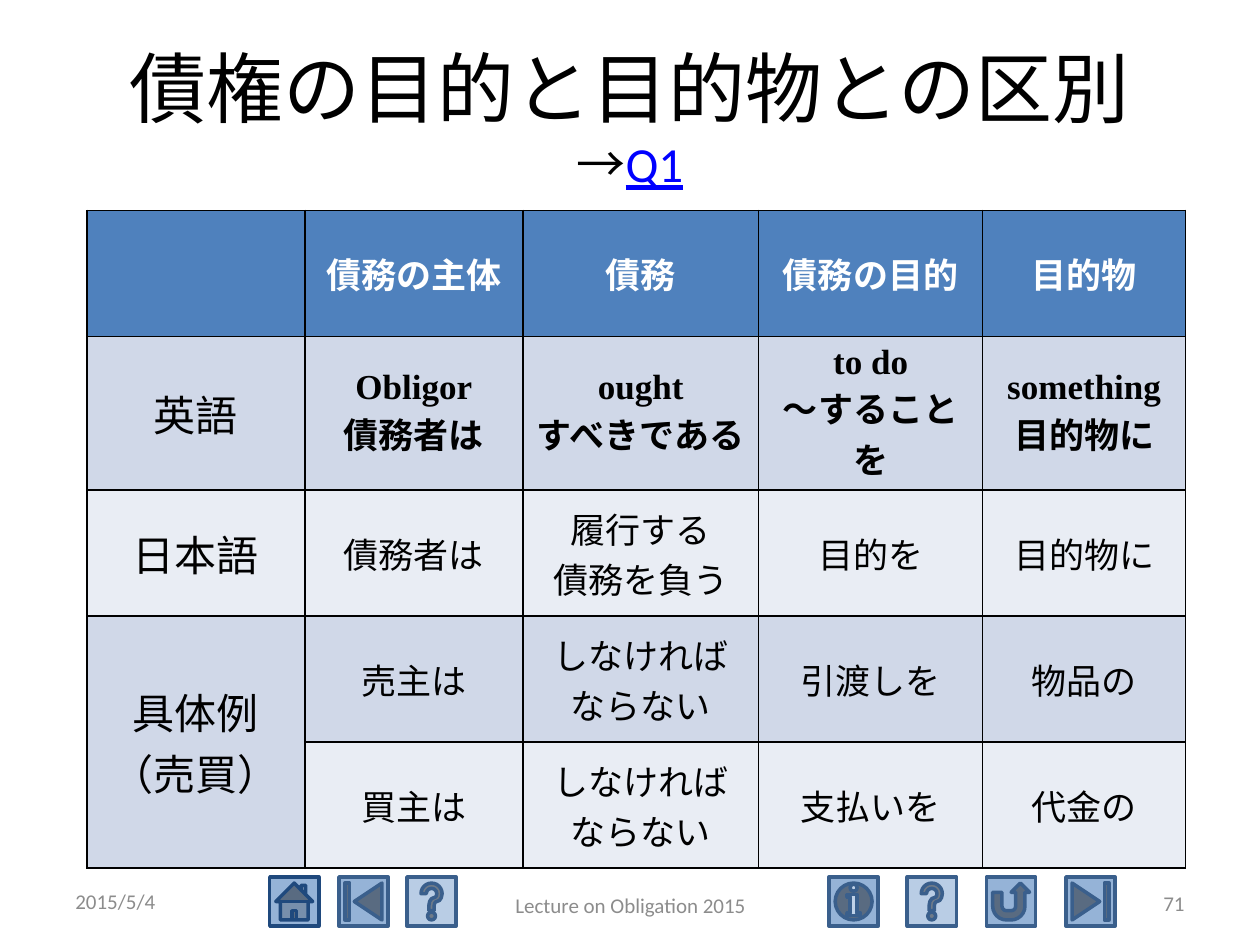
from lxml import etree
from pptx import Presentation
from pptx.dml.color import RGBColor
from pptx.enum.shapes import MSO_SHAPE
from pptx.enum.text import MSO_ANCHOR, MSO_AUTO_SIZE, PP_ALIGN
from pptx.oxml.ns import qn
from pptx.util import Inches, Pt

LEFT, CENTER, RIGHT = PP_ALIGN.LEFT, PP_ALIGN.CENTER, PP_ALIGN.RIGHT
MIDDLE, NO_FIT = MSO_ANCHOR.MIDDLE, MSO_AUTO_SIZE.NONE
HOME, BACK = MSO_SHAPE.ACTION_BUTTON_HOME, MSO_SHAPE.ACTION_BUTTON_BEGINNING
HELP, INFO = MSO_SHAPE.ACTION_BUTTON_HELP, MSO_SHAPE.ACTION_BUTTON_INFORMATION
RETURN, END = MSO_SHAPE.ACTION_BUTTON_RETURN, MSO_SHAPE.ACTION_BUTTON_END

BODY_FONT, ENGLISH_FONT = "Calibri", "Times New Roman"
BLACK, WHITE, GREY, LINK = "000000", "FFFFFF", "8C8C8C", "0000FF"
HEADER, DARK_BAND, LIGHT_BAND = "4F81BD", "D0D8E8", "E9EDF4"
BUTTON, PALE_BUTTON, EDGE, NAVY = "95B3D7", "B9CDE5", "3A5F8C", "1F497D"

COLUMN_WIDTHS = [1.73, 1.73, 1.87, 1.78, 1.61]
ROW_HEIGHTS = [1, 1.22, 1, 1, 1]  # the English row holds three lines
ROW_FILLS = [HEADER, DARK_BAND, LIGHT_BAND, DARK_BAND, LIGHT_BAND]
ROWS = [
    ["", "債務の主体", "債務", "債務の目的", "目的物"],
    ["英語", "Obligor\n債務者は", "ought\nすべきである", "to do\n～することを", "something\n目的物に"],
    ["日本語", "債務者は", "履行する\n債務を負う", "目的を", "目的物に"],
    ["具体例\n（売買）", "売主は", "しなければ\nならない", "引渡しを", "物品の"],
    ["", "買主は", "しなければ\nならない", "支払いを", "代金の"],
]
# Left edge, kind, fill and line of each navigation button
BUTTONS = [
    (2.14, HOME, BUTTON, NAVY), (2.69, BACK, BUTTON, EDGE),
    (3.23, HELP, PALE_BUTTON, EDGE), (6.58, INFO, BUTTON, EDGE),
    (7.2, HELP, PALE_BUTTON, EDGE), (7.83, RETURN, BUTTON, EDGE),
    (8.46, END, BUTTON, EDGE),
]
# Left, top, width, text and alignment of each footer part
FOOTERS = [
    (0.5, 6.95, 2.33, "2015/5/4", LEFT),
    (3.42, 6.98, 3.17, "Lecture on Obligation 2015", CENTER),
    (7.17, 6.97, 2.33, "71", RIGHT),
]


def color(value):
    return RGBColor.from_string(value)


def format_span(span, size, ink=BLACK, font=BODY_FONT, bold=False):
    span.font.size = Pt(size)
    span.font.name = font
    span.font.bold = bold
    span.font.color.rgb = color(ink)


def write(frame, text, size, align=CENTER, **style):
    para = frame.paragraphs[0]
    para.text = text.replace("\n", "\v")
    para.alignment = align
    for span in para.runs:
        format_span(span, size, **style)


def add_title(page):
    title = page.shapes.title
    title.left, title.top = Inches(0.5), Inches(0.3)
    title.width, title.height = Inches(9), Inches(1.25)
    frame = title.text_frame
    frame.word_wrap = True
    frame.vertical_anchor = MIDDLE
    frame.auto_size = NO_FIT
    write(frame, "債権の目的と目的物との区別\n→", 44)
    para = frame.paragraphs[0]
    para.runs[1].font.size = Pt(28)
    link = para.add_run()
    link.text = "Q1"
    format_span(link, 28, LINK)
    link.font.underline = True


def add_button(page, left, kind, fill, line):
    button = page.shapes.add_shape(
        kind, Inches(left), Inches(6.96), Inches(0.39), Inches(0.39))
    button.shadow.inherit = False
    button.fill.solid()
    button.fill.fore_color.rgb = color(fill)
    button.line.color.rgb = color(line)
    button.line.width = Pt(2)


def add_footer(page, left, top, width, text, align):
    box = page.shapes.add_textbox(
        Inches(left), Inches(top), Inches(width), Inches(0.4))
    box.text_frame.word_wrap = True
    box.text_frame.vertical_anchor = MIDDLE
    write(box.text_frame, text, 12, align, ink=GREY)


def add_borders(cell):
    properties = cell._tc.get_or_add_tcPr()
    for index, side in enumerate(("lnL", "lnR", "lnT", "lnB")):
        line = etree.Element(qn(f"a:{side}"), w=str(Pt(1)))
        fill = etree.SubElement(line, qn("a:solidFill"))
        etree.SubElement(fill, qn("a:srgbClr"), val=BLACK)
        properties.insert(index, line)


def cell_style(row, column):
    if row == 0:
        return {"size": 20, "ink": WHITE, "bold": True}
    if column == 0:
        return {"size": 24}
    if row == 1:
        return {"size": 20, "font": ENGLISH_FONT, "bold": True}
    return {"size": 20}


def add_comparison_table(page):
    table = page.shapes.add_table(
        len(ROWS), len(COLUMN_WIDTHS), Inches(0.69), Inches(1.67),
        Inches(sum(COLUMN_WIDTHS)), Inches(sum(ROW_HEIGHTS))).table
    for column, width in zip(table.columns, COLUMN_WIDTHS):
        column.width = Inches(width)
    for row, texts in enumerate(ROWS):
        table.rows[row].height = Inches(ROW_HEIGHTS[row])
        for column, text in enumerate(texts):
            cell = table.cell(row, column)
            cell.fill.solid()
            cell.fill.fore_color.rgb = color(ROW_FILLS[row])
            cell.vertical_anchor = MIDDLE
            add_borders(cell)
            if text:
                write(cell.text_frame, text, **cell_style(row, column))
    # The sale example covers both seller and buyer
    table.cell(3, 0).merge(table.cell(4, 0))


def main():
    deck = Presentation()
    deck.slide_width, deck.slide_height = Inches(10), Inches(7.5)
    page = deck.slides.add_slide(deck.slide_layouts[5])
    # Navigation and footer
    for button in BUTTONS:
        add_button(page, *button)
    for footer in FOOTERS:
        add_footer(page, *footer)
    # Content
    add_title(page)
    add_comparison_table(page)
    deck.save("out.pptx")


if __name__ == "__main__":
    main()
